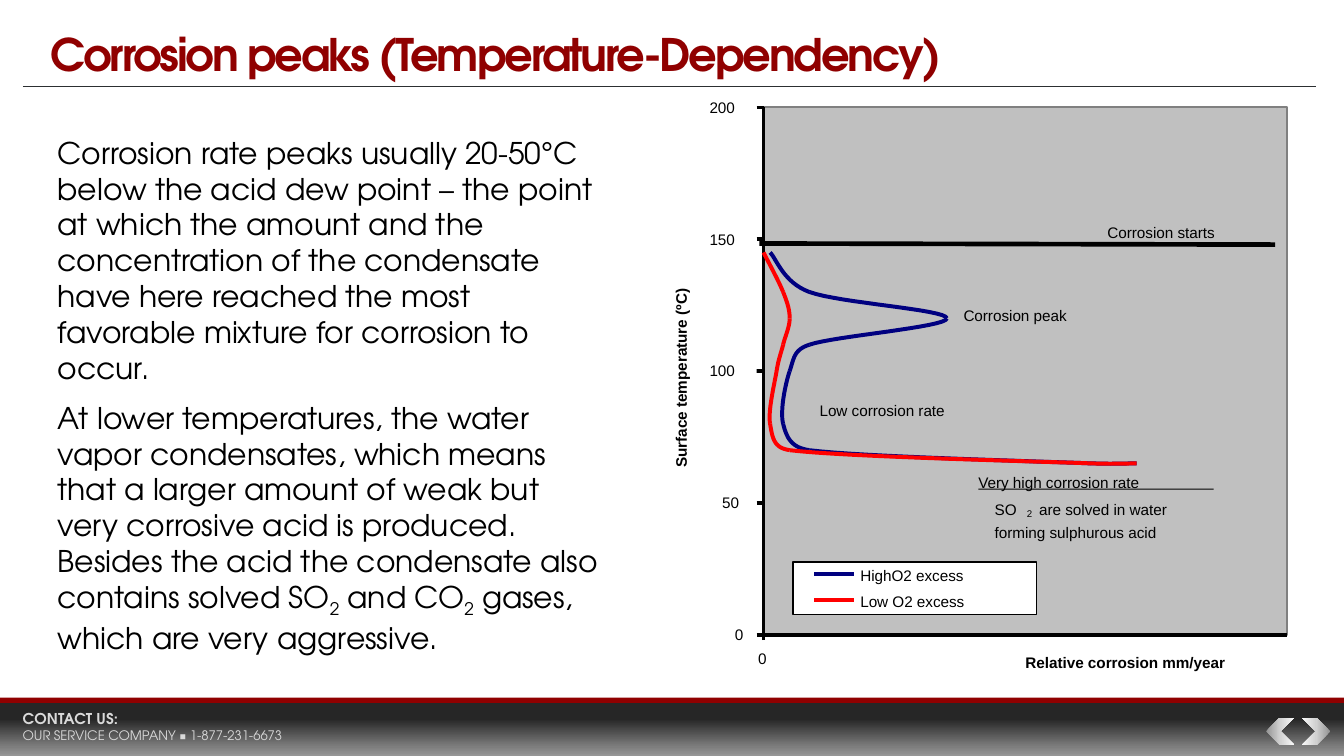
"""Build a slide on how corrosion peaks depend on surface temperature."""
from dataclasses import dataclass
from math import hypot

from pptx import Presentation
from pptx import util as u
from pptx import oxml
from pptx.dml import color
from pptx.enum import shapes, text
from pptx.oxml import ns


@dataclass(frozen=True)
class Theme:
    head: str = "TeX Gyre Adventor"
    plain: str = "Arial"
    red: str = "900000"
    rule: str = "2C2F31"
    pale: str = "D9D9D9"
    black: str = "000000"
    white: str = "FFFFFF"
    grey: str = "C0C0C0"
    edge: str = "808080"
    navy: str = "000080"
    hot: str = "FF0000"
    bar: tuple = ((30, "262626"), (83, "7E7E7E"), (100, "969696"))
    arrow: tuple = ((0, "939393"), (50, "D1D1D1"), (100, "F8F8F8"))
    title: float = 24
    body: float = 16
    label: float = 8.2
    small: float = 5.2
    contact: float = 8
    phone: float = 7
    curve: float = 2.13


look = Theme()
rgb = color.RGBColor.from_string
deck = Presentation()
deck.slide_width, deck.slide_height = u.Cm(25.4), u.Cm(14.28)
slide = deck.slides.add_slide(deck.slide_layouts[6])
items = slide.shapes


def write(box, paras, size, hue=look.black, bold=False, font=look.plain, pad=(0, 0)):
    """Add a text box; parts between bars are subscripts."""
    item = items.add_textbox(*map(u.Cm, box))
    frame = item.text_frame
    frame.word_wrap = True
    frame.margin_left = frame.margin_right = u.Cm(pad[0])
    frame.margin_top = frame.margin_bottom = u.Cm(pad[1])
    for i, line in enumerate(paras):
        para = frame.add_paragraph() if i else frame.paragraphs[0]
        para.font.size, para.font.name = u.Pt(size), font
        para.font.bold, para.font.color.rgb = bold, rgb(hue)
        for j, part in enumerate(line.split("|")):
            run = para.add_run()
            run.text = part
            if j % 2:
                run._r.get_or_add_rPr().set("baseline", "-25000")
    return item


def draw(ends, hue, width):
    """Add a straight line without a shadow."""
    line = items.add_connector(shapes.MSO_CONNECTOR.STRAIGHT, *map(u.Cm, ends))
    line.line.color.rgb, line.line.width = rgb(hue), u.Pt(width)
    line._element.spPr.append(oxml.parse_xml(f"<a:effectLst {ns.nsdecls('a')}/>"))
    return line


left, top, wide, high = 14.43, 2.03, 9.9, 9.96
right, base = left + wide, top + high

rects = []
for box, fill, edge, width in [
    ((0, 13.18, 25.4, 0.1), look.red, None, 0),
    ((left, top, wide, high), look.grey, look.edge, 1),
    ((14.99, 10.62, 4.6, 0.99), look.white, look.black, 0),
    ((18.49, 9.23, 4.45, 0.02), look.black, None, 0),
]:
    rect = items.add_shape(shapes.MSO_SHAPE.RECTANGLE, *map(u.Cm, box))
    rect.shadow.inherit = False
    rect.fill.solid()
    rect.fill.fore_color.rgb = rgb(fill)
    if edge:
        rect.line.color.rgb, rect.line.width = rgb(edge), u.Pt(width)
    else:
        rect.line.fill.background()
    rects.append(rect)
plot = rects[1]

for kind, box, stops, turn, flip in [
    (shapes.MSO_SHAPE.RECTANGLE, (0, 13.28, 25.4, 1), look.bar, 90, False),
    (shapes.MSO_SHAPE.CHEVRON, (24.61, 13.56, 0.53, 0.51), look.arrow, 180, False),
    (shapes.MSO_SHAPE.CHEVRON, (23.93, 13.56, 0.53, 0.51), look.arrow, 180, True),
]:
    item = items.add_shape(kind, *map(u.Cm, box))
    item.shadow.inherit = False
    item.line.fill.background()
    item.fill.background()
    props = item._element.spPr
    marks = "".join(
        f'<a:gs pos="{at * 1000}"><a:srgbClr val="{hue}"/></a:gs>' for at, hue in stops
    )
    blend = oxml.parse_xml(
        f'<a:gradFill rotWithShape="1" {ns.nsdecls("a")}><a:gsLst>{marks}</a:gsLst>'
        f'<a:lin ang="{turn * 60000}" scaled="0"/></a:gradFill>'
    )
    props.replace(props.find(ns.qn("a:noFill")), blend)
    if flip:
        props.find(ns.qn("a:xfrm")).set("flipH", "1")

draw((0.43, 1.63, 24.87, 1.63), look.rule, 0.75)
title = write((0.71, -0.13, 23.27, 1.75), ["Corrosion peaks (Temperature-Dependency)"],
              look.title, look.red, True, look.head, (0.25, 0.1))
title.text_frame.vertical_anchor = text.MSO_ANCHOR.BOTTOM
title.text_frame.paragraphs[0].runs[0]._r.get_or_add_rPr().set("spc", "-120")

foot = write((0.18, 13.26, 8.69, 0.91),
             ["CONTACT US:", "OUR SERVICE COMPANY ▪ 1-877-231-6673"],
             look.contact, look.pale, True, look.head, (0.25, 0.13))
foot.text_frame.vertical_anchor = text.MSO_ANCHOR.BOTTOM
phone = foot.text_frame.paragraphs[1].font
phone.size, phone.bold = u.Pt(look.phone), False

story = write((0.84, 2.41, 10.8, 10.19), [
    "Corrosion rate peaks usually 20-50°C below the acid dew point – the point at "
    "which the amount and the concentration of the condensate have here reached the "
    "most favorable mixture for corrosion to occur.",
    "At lower temperatures, the water vapor condensates, which means that a larger "
    "amount of weak but very corrosive acid is produced. Besides the acid the "
    "condensate also contains solved SO|2| and CO|2| gases, which are very aggressive.",
], look.body, font=look.head, pad=(0.25, 0.13))
story.text_frame.paragraphs[1].space_before = u.Pt(7.5)

draw((left, top, left, base), look.black, 0)
draw((left, base, right, base), look.black, 0)
draw((left, base + 0.1, left, base), look.black, 0)
for heat in range(0, 201, 50):
    y = base - high * heat / 200
    tick = draw((left - 0.13, y, left, y), look.black, 0)
    if heat == 100:
        tick.end_connect(plot, 1)
    word = str(heat)
    write((13.41 + 0.24 * (3 - len(word)), y - 0.18, 0.71, 0.46), [word], look.label)

tail = [(50, 65), (57, 65)]
curves = [
    (look.navy, [(1, 145), (7, 130), (28, 120), (7, 110), (4, 100), (3, 80), (7, 70)]),
    (look.hot, [(0, 145), (3, 130), (4, 120), (3, 110), (2, 100), (1, 80), (4, 70)]),
]
for hue, data in curves:
    knots = [(left + wide * rate / 80, base - high * heat / 200)
             for rate, heat in data + tail]
    for i, (a, d) in enumerate(zip(knots, knots[1:])):
        prev, post = knots[max(i - 1, 0)], knots[min(i + 2, len(knots) - 1)]
        cap = hypot(d[0] - a[0], d[1] - a[1]) / 2
        pulls = []
        for p, q in ((prev, d), (a, post)):
            x, y = (q[0] - p[0]) / 6, (q[1] - p[1]) / 6
            ratio = min(1, cap / hypot(x, y))
            pulls.append((x * ratio, y * ratio))
        b = [a[k] + pulls[0][k] for k in (0, 1)]
        c = [d[k] - pulls[1][k] for k in (0, 1)]
        dots = []
        for t in (n / 16 for n in range(17)):
            s = 1 - t
            dots.append([u.Cm(s**3 * a[k] + 3 * s * s * t * b[k]
                              + 3 * s * t * t * c[k] + t**3 * d[k]) for k in (0, 1)])
        path = items.build_freeform(*dots[0])
        path.add_line_segments(dots[1:], close=False)
        curve = path.convert_to_shape()
        curve.shadow.inherit = False
        curve.fill.background()
        curve.line.color.rgb, curve.line.width = rgb(hue), u.Pt(look.curve)

for y, hue, word in [(10.85, look.navy, "HighO2 excess"), (11.33, look.hot, "Low O2 excess")]:
    draw((15.39, y, 16.15, y), hue, look.curve)
    write((16.26, y - 0.15, 2.95, 0.46), [word], look.label)

draw((14.35, 4.6, 24.1, 4.62), look.black, 2.5)
for x, y, width, word, size, bold in [
    (14.33, 12.27, 0.25, "0", look.label, False),
    (19.38, 12.34, 5.66, "Relative corrosion mm/year", look.label, True),
    (20.93, 4.22, 3.05, "Corrosion starts", look.label, False),
    (18.21, 5.79, 2.95, "Corrosion peak", look.label, False),
    (15.49, 7.57, 3.56, "Low corrosion rate", look.label, False),
    (18.49, 8.94, 4.6, "Very high corrosion rate", look.label, False),
    (18.8, 9.45, 0.61, "SO", look.label, False),
    (19.41, 9.6, 0.15, "2", look.small, False),
    (19.64, 9.45, 3.86, "are solved in water", look.label, False),
    (18.8, 9.88, 4.6, "forming sulphurous acid", look.label, False),
]:
    write((x, y, width, 0.46), [word], size, bold=bold)
axis = write((10.64, 6.27, 4.62, 0.51), ["Surface temperature (ºC)"], look.label, bold=True)
axis.rotation = 270

deck.save("out.pptx")
